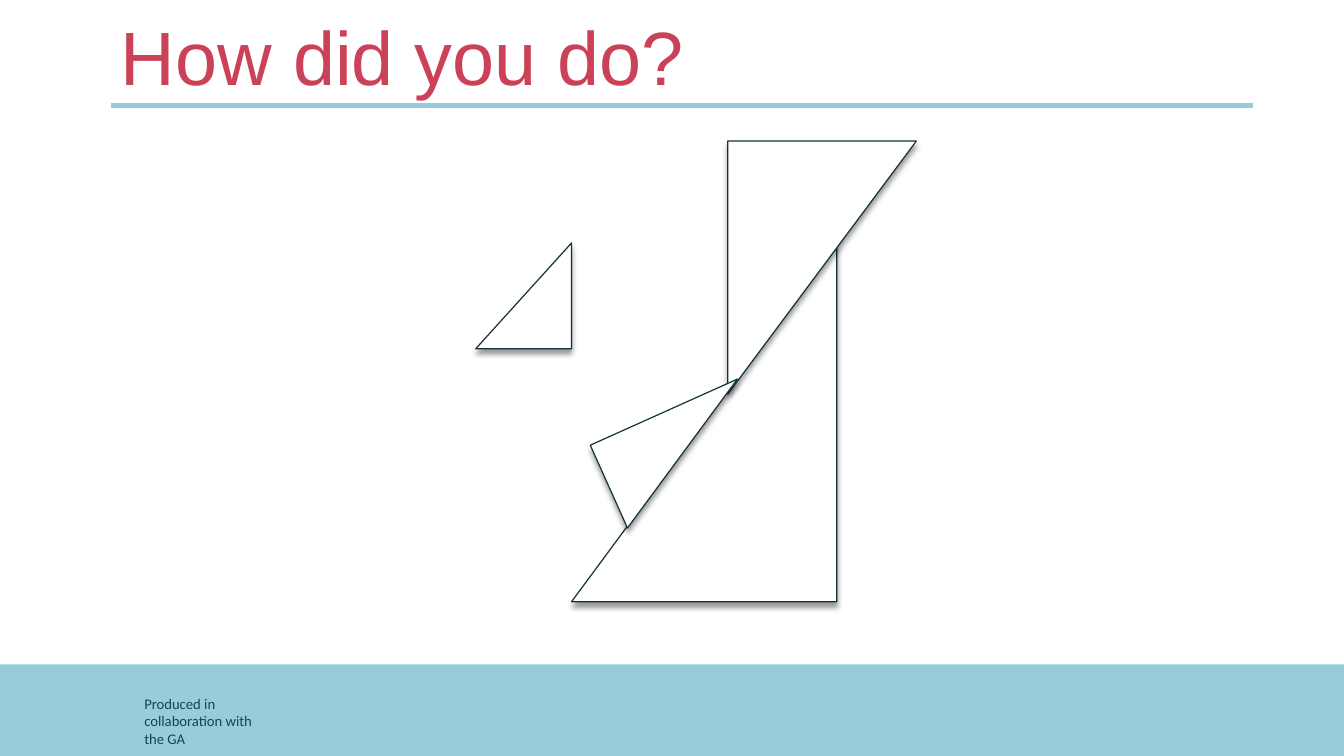
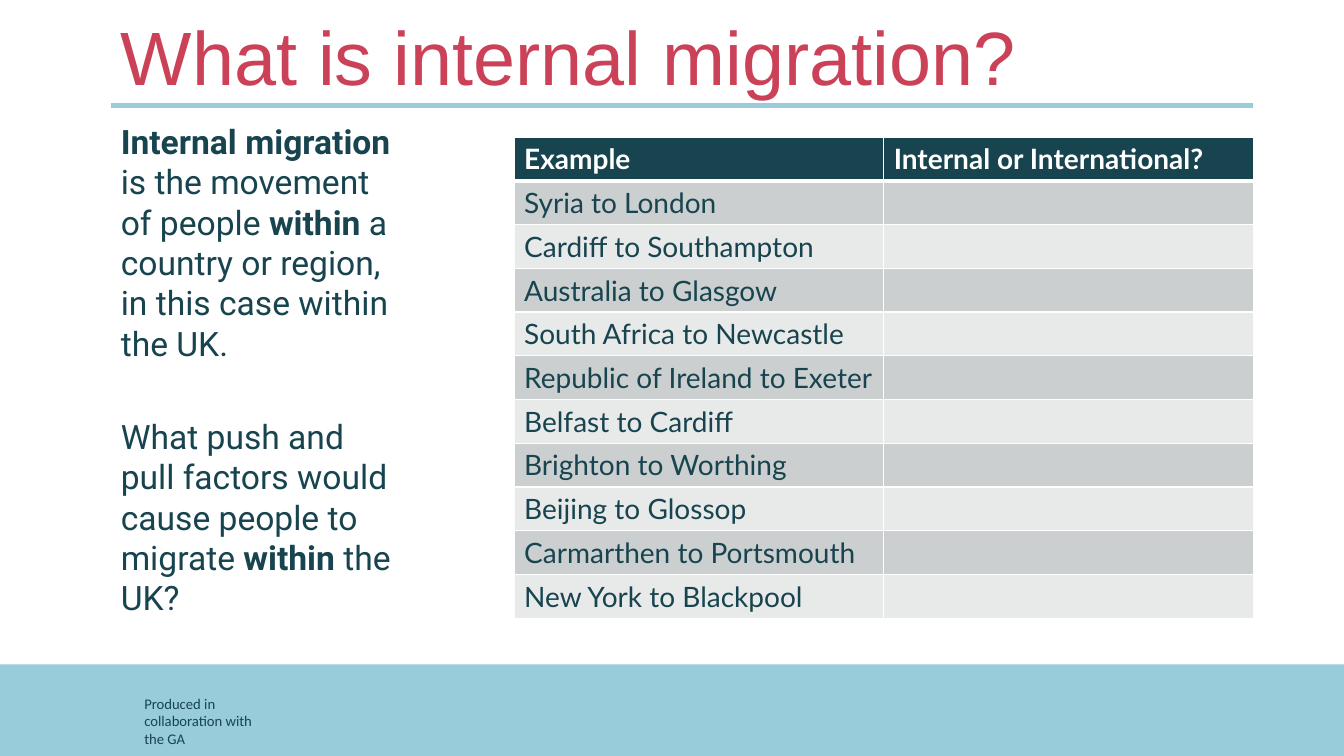
from dataclasses import dataclass

import pptx
import pptx.dml.color
import pptx.enum.shapes
import pptx.enum.text
import pptx.oxml
import pptx.oxml.ns
import pptx.util
from lxml import etree

Pt = pptx.util.Pt
MSO_SHAPE = pptx.enum.shapes.MSO_SHAPE
ANCHOR = pptx.enum.text.MSO_ANCHOR
qn = pptx.oxml.ns.qn

WIDTH, HEIGHT = pptx.util.Inches(13.333), pptx.util.Inches(7.5)
WHITE, SKY, TEAL, INK, RED = "FFFFFF", "98CCDB", "17444F", "11323A", "CB4157"
ROW_FILLS = ("CCCFD0", "E8E9E9")

TITLE_FONT = {"name": "Arial", "size": Pt(54), "bold": False, "color": RED}
FOOTER_FONT = {"name": "Calibri", "size": Pt(10.5), "color": TEAL}
BODY_FONT = {"name": "Roboto", "size": Pt(24), "color": TEAL}
HEAD_FONT = {"name": "Lato", "size": Pt(20), "bold": True, "color": WHITE}
CELL_FONT = {**HEAD_FONT, "bold": False, "color": TEAL}


@dataclass(frozen=True)
class Box:
    """A place on the slide, in percent of the slide's width and height."""
    left: float
    top: float
    width: float
    height: float

    def emu(self) -> tuple[int, int, int, int]:
        return (across(self.left), down(self.top),
                across(self.width), down(self.height))


@dataclass(frozen=True)
class Triangle:
    box: Box
    flip: str = ""
    rotation: float = 0


LEFT, CONTENT_WIDTH, RULE_Y, BAND_Y = 8.25, 85, 14, 87.87
TITLE = Box(LEFT, 0.93, CONTENT_WIDTH, RULE_Y - 0.93)
BAND = Box(0, BAND_Y, 100, 100 - BAND_Y)
FOOTER = Box(10, 91.2, 10.28, 8.27)
BODY = Box(LEFT, 15.33, 21.6, 66.53)
TABLE = Box(38.25, 18.13, LEFT + CONTENT_WIDTH - 38.25, 63.6)

TRIANGLES = (
    Triangle(Box(42.53, 32.13, 19.73, 47.47), flip="flipH"),
    Triangle(Box(54.15, 18.67, 14.03, 33.47), flip="flipV"),
    Triangle(Box(47.4, 49.33, 6.75, 21.33), rotation=65.8),
    Triangle(Box(35.4, 32.13, 7.13, 14), flip="flipH"),
)

# Each paragraph is a list of (text, bold) runs.
DEFINITION = (
    [("Internal migration ", True), ("is the movement of people ", False),
     ("within", True),
     (" a country or region, in this case within the UK.", False)],
    [("What push and pull factors would cause people to migrate ", False),
     ("within", True), (" the UK?", False)],
)
HEADINGS = ("Example", "Internal or International?")
JOURNEYS = (
    "Syria to London", "Cardiff to Southampton", "Australia to Glasgow",
    "South Africa to Newcastle", "Republic of Ireland to Exeter",
    "Belfast to Cardiff", "Brighton to Worthing", "Beijing to Glossop",
    "Carmarthen to Portsmouth", "New York to Blackpool",
)


def across(share: float) -> int:
    return round(WIDTH * share / 100)


def down(share: float) -> int:
    return round(HEIGHT * share / 100)


def rgb(value: str) -> pptx.dml.color.RGBColor:
    return pptx.dml.color.RGBColor.from_string(value)


def paint(target, color: str) -> None:
    target.fill.solid()
    target.fill.fore_color.rgb = rgb(color)


def style(font, values: dict) -> None:
    for name, value in values.items():
        if name == "color":
            font.color.rgb = rgb(value)
        else:
            setattr(font, name, value)


def add_run(p, text: str, values: dict) -> None:
    r = p.add_run()
    r.text = text
    style(r.font, values)


def add_text(slide, box: Box):
    tf = slide.shapes.add_textbox(*box.emu()).text_frame
    tf.word_wrap = True
    return tf


def add_shape(slide, kind, box: Box, fill: str):
    sp = slide.shapes.add_shape(kind, *box.emu())
    sp.shadow.inherit = False
    paint(sp, fill)
    sp.line.fill.background()
    return sp


def add_base(prs, title: str):
    """Add a slide with the title, rule, band and footer."""
    slide = prs.slides.add_slide(prs.slide_layouts[5])
    add_shape(slide, MSO_SHAPE.RECTANGLE, BAND, SKY)
    add_run(add_text(slide, FOOTER).paragraphs[0],
            "Produced in collaboration with the GA", FOOTER_FONT)

    y = down(RULE_Y)
    rule = slide.shapes.add_connector(
        pptx.enum.shapes.MSO_CONNECTOR.STRAIGHT,
        across(LEFT), y, across(LEFT + CONTENT_WIDTH), y)
    rule.line.color.rgb = rgb(SKY)
    rule.line.width = Pt(3.5)
    etree.SubElement(rule.element.spPr, qn("a:effectLst"))

    sp = slide.shapes.title
    sp.left, sp.top, sp.width, sp.height = TITLE.emu()
    tf = sp.text_frame
    tf.auto_size = pptx.enum.text.MSO_AUTO_SIZE.NONE
    tf.vertical_anchor = ANCHOR.BOTTOM
    p = tf.paragraphs[0]
    p.alignment = pptx.enum.text.PP_ALIGN.LEFT
    add_run(p, title, TITLE_FONT)
    return slide


def add_soft_shadow(sp) -> None:
    effects = sp.element.spPr.find(qn("a:effectLst"))
    shadow = etree.SubElement(
        effects, qn("a:outerShdw"), blurRad=str(Pt(4)), dist=str(Pt(3)),
        dir="5400000", rotWithShape="0")
    color = etree.SubElement(shadow, qn("a:srgbClr"), val="000000")
    etree.SubElement(color, qn("a:alpha"), val="40000")


def add_triangle(slide, triangle: Triangle) -> None:
    sp = add_shape(slide, MSO_SHAPE.RIGHT_TRIANGLE, triangle.box, WHITE)
    sp.line.color.rgb = rgb(INK)
    sp.line.width = Pt(0.85)
    sp.rotation = triangle.rotation
    if triangle.flip:
        sp.element.spPr.xfrm.set(triangle.flip, "1")
    add_soft_shadow(sp)


def add_definition(slide) -> None:
    tf = add_text(slide, BODY)
    for i, runs in enumerate(DEFINITION):
        p = tf.add_paragraph() if i else tf.paragraphs[0]
        if i:
            p.space_before = Pt(38)
        for text, bold in runs:
            add_run(p, text, {**BODY_FONT, "bold": bold})


def set_borders(cell, widths: dict[str, float]) -> None:
    tc_pr = cell._tc.get_or_add_tcPr()
    for side, width in widths.items():
        line = etree.SubElement(tc_pr, qn(f"a:ln{side}"), w=str(Pt(width)))
        fill = etree.SubElement(line, qn("a:solidFill"))
        etree.SubElement(fill, qn("a:srgbClr"), val=WHITE)


def add_journeys(slide) -> None:
    rows = [HEADINGS, *((journey, "") for journey in JOURNEYS)]
    table = slide.shapes.add_table(
        len(rows), len(HEADINGS), *TABLE.emu()).table
    for i, texts in enumerate(rows):
        table.rows[i].height = down(TABLE.height / len(rows))
        fill = ROW_FILLS[(i - 1) % 2] if i else TEAL
        top, bottom = 3 if i == 1 else 1, 1 if i else 3
        for j, text in enumerate(texts):
            cell = table.cell(i, j)
            set_borders(cell, {"L": 1, "R": 1, "T": top, "B": bottom})
            paint(cell, fill)
            cell.vertical_anchor = ANCHOR.MIDDLE
            if text:
                add_run(cell.text_frame.paragraphs[0], text,
                        CELL_FONT if i else HEAD_FONT)


def main() -> None:
    prs = pptx.Presentation()
    prs.slide_width, prs.slide_height = WIDTH, HEIGHT

    slide = add_base(prs, "How did you do?")
    for triangle in TRIANGLES:
        add_triangle(slide, triangle)

    slide = add_base(prs, "What is internal migration?")
    add_definition(slide)
    add_journeys(slide)

    prs.save("out.pptx")


if __name__ == "__main__":
    main()
